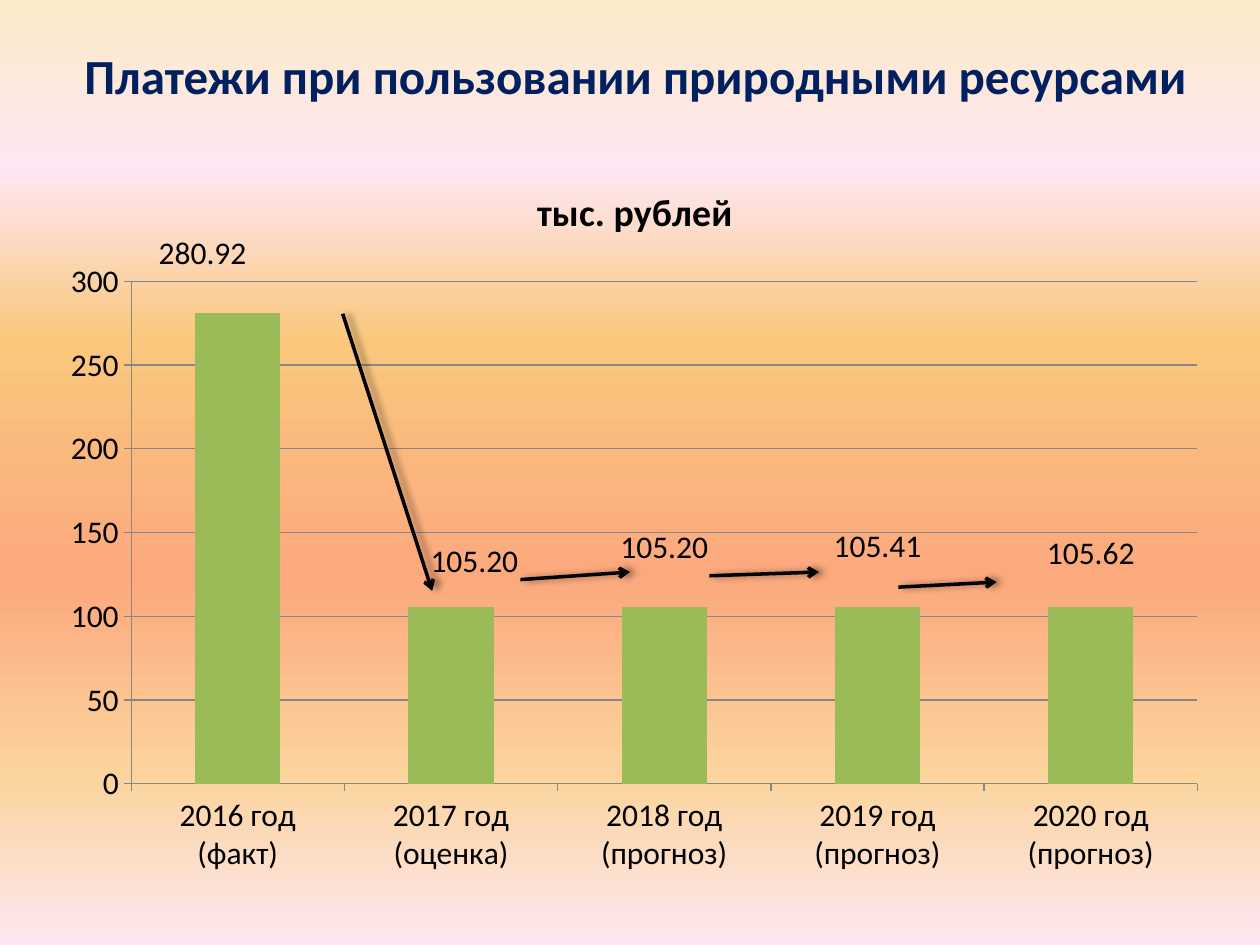
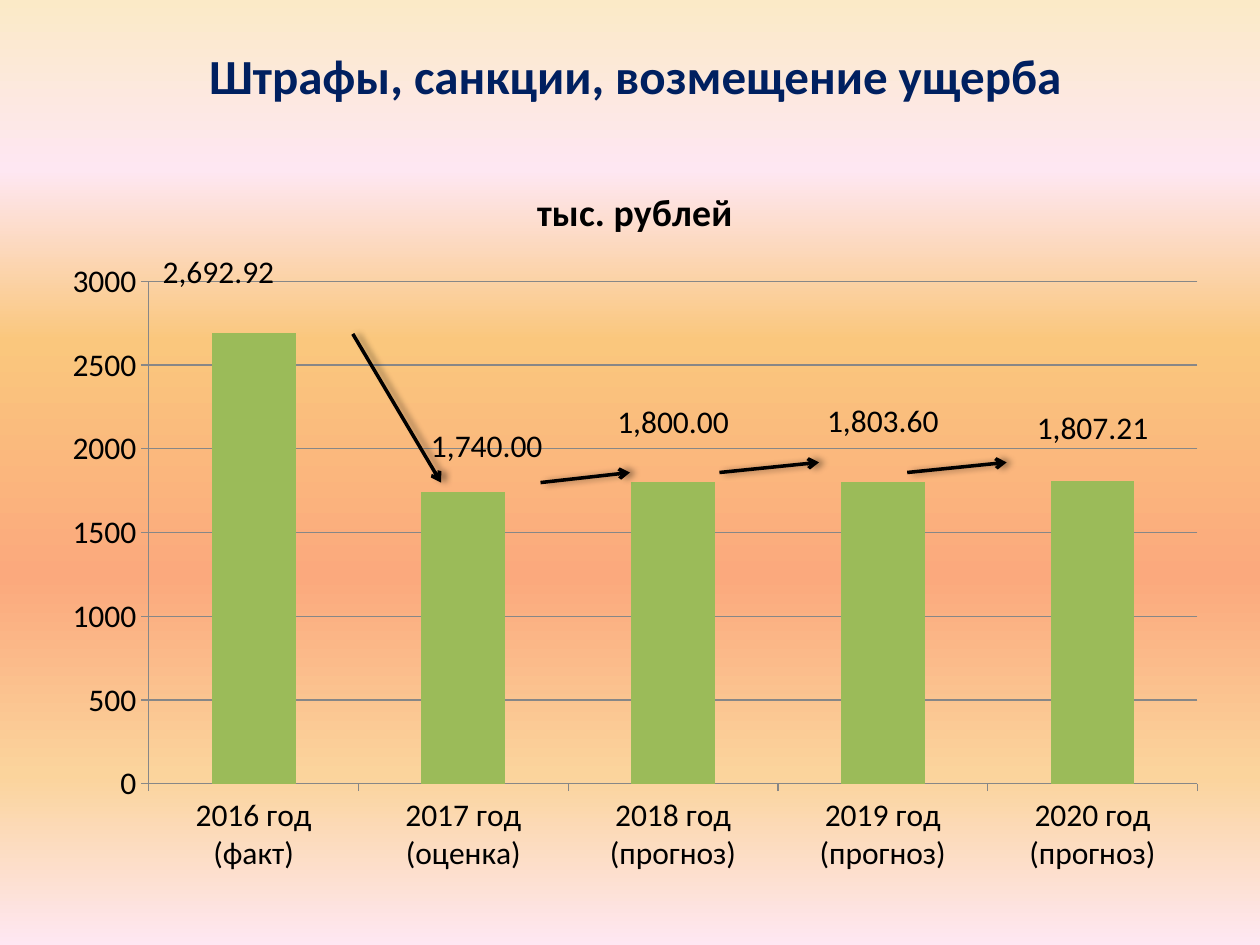
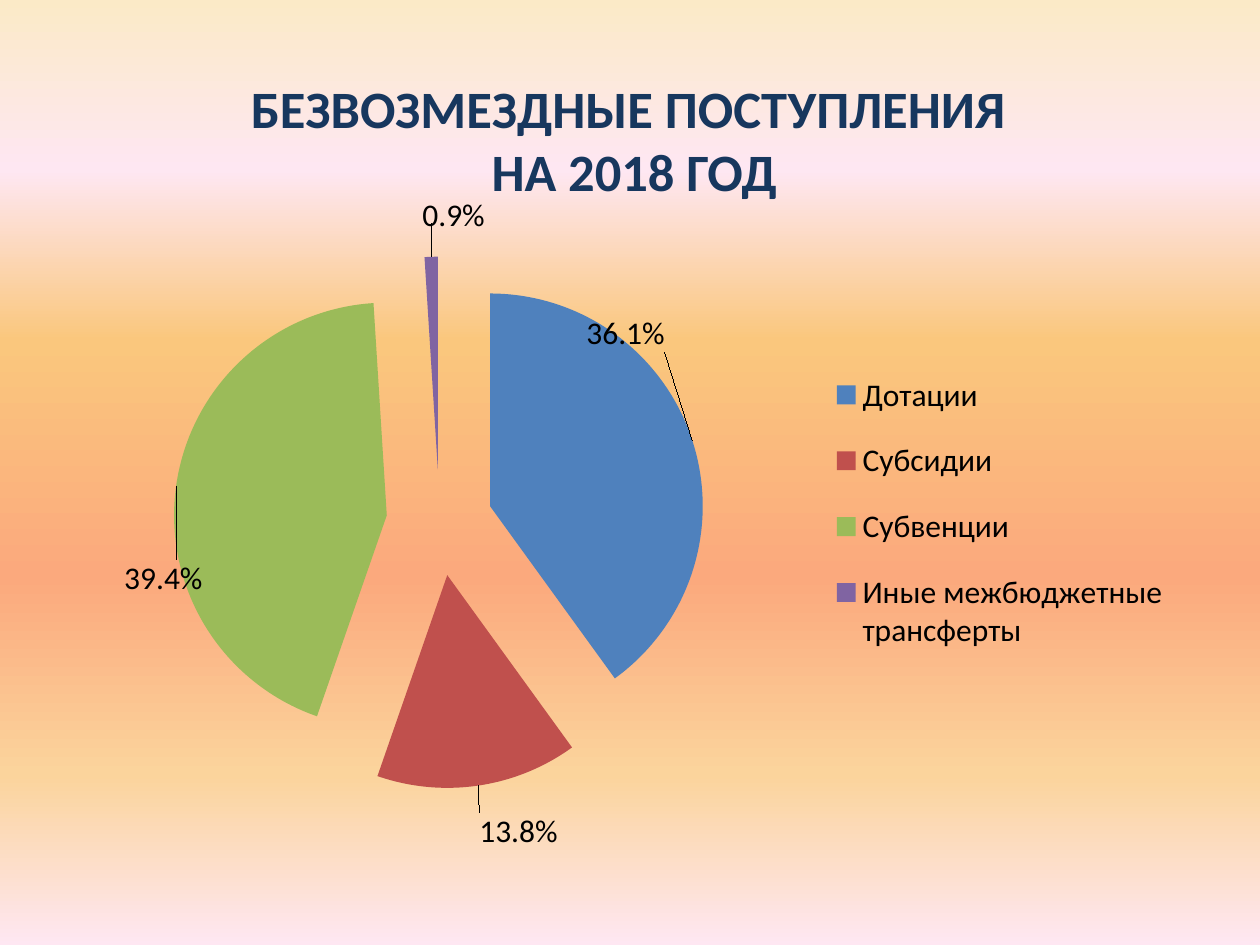
from dataclasses import dataclass

from lxml import etree
from pptx import Presentation
from pptx.chart.data import CategoryChartData
from pptx.dml.color import RGBColor
from pptx.enum import chart as ch, shapes, text
from pptx.oxml import parse_xml
from pptx.oxml.ns import nsdecls, qn
from pptx.util import Inches, Pt


@dataclass(frozen=True)
class Theme:
    font: str = "Calibri"
    title_color: str = "002060"
    caps_color: str = "17375E"
    black: str = "000000"
    bar: str = "9BBB59"
    grid: str = "878787"
    slices: tuple = ("4F81BD", "C0504D", "9BBB59", "8064A2")
    backdrop: tuple = ((0, "FBEAC7"), (18, "FEE7F2"), (36, "FAC77D"),
                       (61, "FBA97D"), (82, "FBD49C"), (100, "FEE7F2"))
    title_size: float = 28
    caps_size: float = 30
    chart_size: float = 18
    chart_title_size: float = 21.6


THEME = Theme()
UNIT = "тыс. рублей"
YEARS = ("2016 год (факт)", "2017 год (оценка)", "2018 год (прогноз)",
         "2019 год (прогноз)", "2020 год (прогноз)")
TITLE_BOX = (0.39, 0.31, 9.3, 1.15)
BAR_BOX = (0.39, 1.25, 9.3, 5.78)
CAPS_BOX = (0.62, 0.55, 8.83, 1.11)
PIE_BOX = (0.39, 1.56, 8.98, 5.23)
BAR_LABEL_SHIFTS = ((-0.03, -0.05), (0.02, -0.03), (0, -0.05), (0, -0.05), (0, -0.04))
PIE_LABEL_SHIFTS = ((-0.1, -0.13), (0, 0.03), (0.03, 0.17), (0.02, -0.04))


def rgb(color):
    return RGBColor.from_string(color)


def style_font(font, size, color, bold=False):
    font.name, font.size, font.bold = THEME.font, Pt(size), bold
    font.color.rgb = rgb(color)


def set_backdrop(master):
    """Give every slide the vertical gradient through the master."""
    fill = master.background.fill
    fill.gradient()
    grad = master.element.find(f".//{qn('p:bgPr')}/{qn('a:gradFill')}")
    stops = "".join(f'<a:gs pos="{pos * 1000}"><a:srgbClr val="{color}"/></a:gs>'
                    for pos, color in THEME.backdrop)
    grad.getparent().replace(grad, parse_xml(
        f'<a:gradFill {nsdecls("a")} rotWithShape="1"><a:gsLst>{stops}</a:gsLst>'
        '<a:lin ang="5400000" scaled="0"/></a:gradFill>'))


def add_titled_slide(prs, title, box, size, color):
    slide = prs.slides.add_slide(prs.slide_layouts[5])
    sp = slide.shapes.title
    sp.left, sp.top, sp.width, sp.height = map(Inches, box)
    tf = sp.text_frame
    tf.text = title
    tf.word_wrap = True
    tf.auto_size = text.MSO_AUTO_SIZE.NONE
    tf.vertical_anchor = text.MSO_ANCHOR.TOP
    for p in tf.paragraphs:
        p.alignment = text.PP_ALIGN.CENTER
        for r in p.runs:
            style_font(r.font, size, color, bold=True)
    return slide


def set_layout(parent, index, **fields):
    """Insert a manual chart layout as the child at the given index."""
    for old in parent.findall(qn("c:layout")):
        parent.remove(old)
    items = "".join(f'<c:{tag} val="{val}"/>' for tag, val in fields.items())
    parent.insert(index, parse_xml(
        f'<c:layout {nsdecls("c")}><c:manualLayout>{items}</c:manualLayout></c:layout>'))


def box_layout(x, y, w, h):
    return dict(xMode="edge", yMode="edge", x=x, y=y, w=w, h=h)


def add_chart(slide, kind, box, name, cats, values, number_format, plot_box):
    data = CategoryChartData(number_format=number_format)
    data.categories = cats
    data.add_series(name, values)
    chart = slide.shapes.add_chart(kind, *map(Inches, box), data).chart
    style_font(chart.font, THEME.chart_size, THEME.black)
    chart.has_title = chart.has_legend = False
    area = chart.plots[0]._element.getparent()
    set_layout(area, 0, layoutTarget="inner", **box_layout(*plot_box))
    return chart


def label_points(series, shifts, number_format, leaders):
    """Show values outside the points, each moved by a share of the chart."""
    labels = series.data_labels
    labels.show_value = True
    labels.number_format = number_format
    labels.number_format_is_linked = False
    labels.position = ch.XL_LABEL_POSITION.OUTSIDE_END
    for i, (x, y) in enumerate(shifts):
        series.points[i].data_label.position = ch.XL_LABEL_POSITION.OUTSIDE_END
        dlbl = labels._element.findall(qn("c:dLbl"))[i]
        set_layout(dlbl, 1, x=x, y=y)
    for flag in labels._element.findall(qn("c:showLeaderLines")):
        flag.set("val", str(int(leaders)))


def style_axes(chart):
    for axis in (chart.category_axis, chart.value_axis):
        axis.format.line.color.rgb = rgb(THEME.grid)
        axis.major_tick_mark = ch.XL_TICK_MARK.OUTSIDE
        axis.minor_tick_mark = ch.XL_TICK_MARK.NONE
    value = chart.value_axis
    value.has_major_gridlines = True
    value.major_gridlines.format.line.color.rgb = rgb(THEME.grid)
    value.tick_labels.number_format = "General"
    value.tick_labels.number_format_is_linked = False


def add_trend_arrow(slide, start, end):
    line = slide.shapes.add_connector(
        shapes.MSO_CONNECTOR.STRAIGHT, *map(Inches, (*start, *end)))
    line.line.color.rgb = rgb(THEME.black)
    line.line.width = Pt(2)
    etree.SubElement(line.line._get_or_add_ln(), qn("a:tailEnd"), type="arrow")
    line.element.spPr.append(parse_xml(
        f'<a:effectLst {nsdecls("a")}><a:outerShdw blurRad="{Pt(4)}" dist="{Pt(3)}" '
        f'dir="0" algn="l" rotWithShape="0"><a:srgbClr val="{THEME.black}">'
        '<a:alpha val="40000"/></a:srgbClr></a:outerShdw></a:effectLst>'))


def add_revenue_slide(prs, title, values, plot_left, arrows):
    slide = add_titled_slide(prs, title, TITLE_BOX, THEME.title_size, THEME.title_color)
    number_format = "#,##0.00"
    chart = add_chart(slide, ch.XL_CHART_TYPE.COLUMN_CLUSTERED, BAR_BOX, UNIT, YEARS,
                      values, number_format, (plot_left, 0.17, 0.98 - plot_left, 0.69))
    chart.has_title = True
    tf = chart.chart_title.text_frame
    tf.text = UNIT
    style_font(tf.paragraphs[0].runs[0].font, THEME.chart_title_size, THEME.black, bold=True)
    style_axes(chart)
    plot = chart.plots[0]
    plot.gap_width = 150
    plot.vary_by_categories = False
    series = plot.series[0]
    series.format.fill.solid()
    series.format.fill.fore_color.rgb = rgb(THEME.bar)
    label_points(series, BAR_LABEL_SHIFTS, number_format, leaders=False)
    for start, end in arrows:
        add_trend_arrow(slide, start, end)


def add_grants_slide(prs, title, shares):
    slide = add_titled_slide(prs, title, CAPS_BOX, THEME.caps_size, THEME.caps_color)
    number_format = "0.0%"
    chart = add_chart(slide, ch.XL_CHART_TYPE.PIE, PIE_BOX, "Series 1", shares.keys(),
                      shares.values(), number_format, (0.11, 0.09, 0.47, 0.81))
    chart.has_legend = True
    legend = chart.legend
    legend.position = ch.XL_LEGEND_POSITION.RIGHT
    legend.include_in_layout = False
    set_layout(legend._element, 1, **box_layout(0.69, 0.23, 0.3, 0.5))
    plot = chart.plots[0]
    plot.vary_by_categories = True
    series = plot.series[0]
    for i, color in enumerate(THEME.slices):
        fill = series.points[i].format.fill
        fill.solid()
        fill.fore_color.rgb = rgb(color)
    series._element.find(qn("c:tx")).addnext(
        parse_xml(f'<c:explosion {nsdecls("c")} val="25"/>'))
    label_points(series, PIE_LABEL_SHIFTS, number_format, leaders=True)


def main():
    prs = Presentation()
    prs.slide_width, prs.slide_height = Inches(10), Inches(7.5)
    set_backdrop(prs.slide_master)
    add_revenue_slide(
        prs, "Платежи при пользовании природными ресурсами",
        (280.92, 105.2, 105.2, 105.41, 105.62), 0.07,
        (((2.72, 2.49), (3.43, 4.69)), ((4.13, 4.6), (5, 4.54)),
         ((5.63, 4.57), (6.5, 4.54)), ((7.13, 4.66), (7.91, 4.62))))
    add_revenue_slide(
        prs, "Штрафы, санкции, возмещение ущерба",
        (2692.92, 1740, 1800, 1803.6, 1807.21), 0.085,
        (((2.8, 2.65), (3.5, 3.83)), ((4.29, 3.83), (5, 3.75)),
         ((5.71, 3.75), (6.5, 3.67)), ((7.2, 3.75), (7.99, 3.67))))
    add_grants_slide(
        prs, "БЕЗВОЗМЕЗДНЫЕ ПОСТУПЛЕНИЯ \nНА 2018 ГОД",
        {"Дотации": 0.361, "Субсидии": 0.138, "Субвенции": 0.394,
         "Иные межбюджетные трансферты": 0.009})
    prs.save("out.pptx")


if __name__ == "__main__":
    main()
